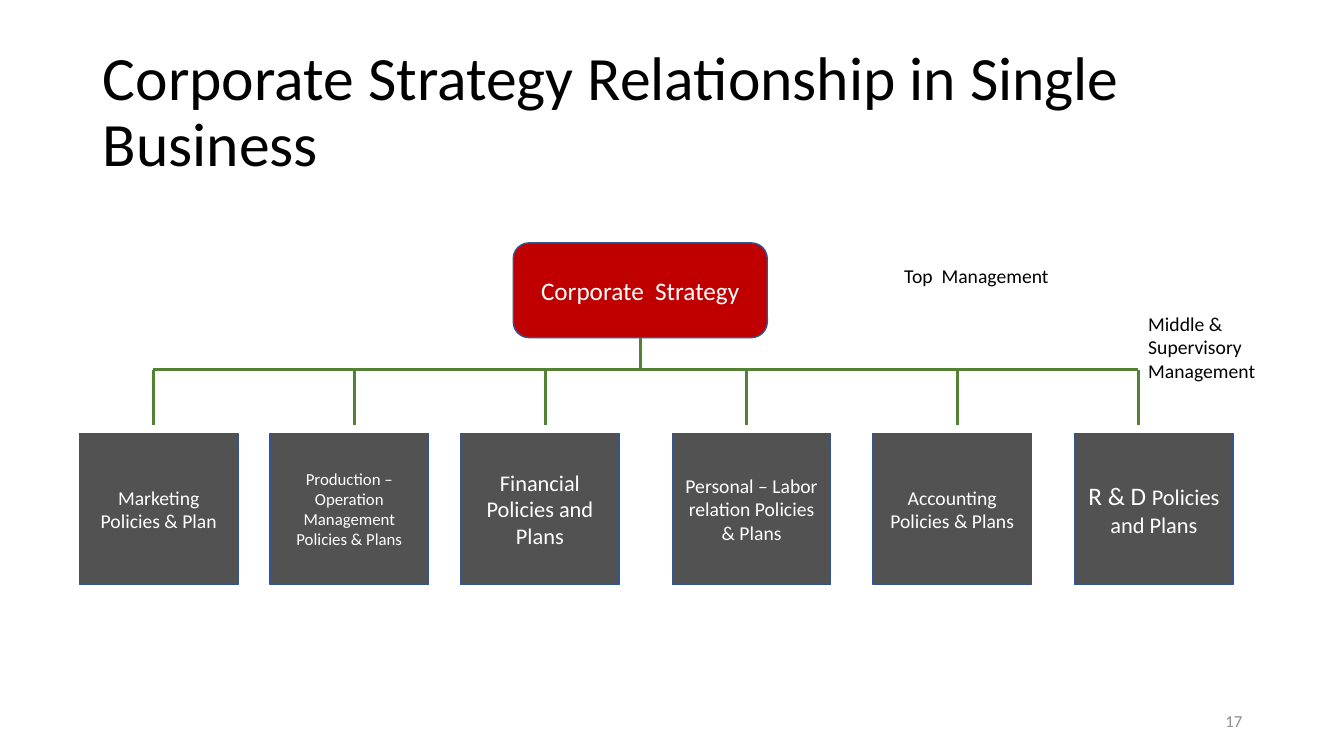
from pptx import Presentation
from pptx.dml.color import RGBColor
from pptx.enum.shapes import MSO_CONNECTOR as Link, MSO_SHAPE as Form
from pptx.enum.text import MSO_ANCHOR as Anchor, MSO_AUTO_SIZE as Fit, PP_ALIGN as Align
from pptx.util import Inches, Pt
from lxml import etree

DRAW = "http://schemas.openxmlformats.org/drawingml/2006/main"


def color(code):
    return RGBColor.from_string(code)


class Chart:
    """Style and current slide of an organization chart."""
    face = "Calibri"
    ink, pale, muted = "000000", "FFFFFF", "8C8C8C"
    red, gray, edge, green = "C00000", "525252", "325491", "548235"

    def __init__(self, slide):
        self.slide = slide

    def style(self, font, size, code):
        font.name, font.size = self.face, Pt(size)
        font.color.rgb = color(code)

    def fill_text(self, shape, runs, code, align=Align.LEFT, anchor=Anchor.MIDDLE):
        frame = shape.text_frame
        frame.word_wrap = True
        frame.vertical_anchor = anchor
        para = frame.paragraphs[0]
        para.alignment = align
        for text, size in runs:
            run = para.add_run()
            run.text = text
            if len(runs) > 1:
                self.style(run.font, size, code)
        if len(runs) == 1:
            self.style(para.font, runs[0][1], code)
        return para

    def title(self, text, *area):
        shape = self.slide.shapes.title
        shape.left, shape.top, shape.width, shape.height = map(Inches, area)
        self.fill_text(shape, [(text, 44)], self.ink).line_spacing = 0.9
        shape.text_frame.auto_size = Fit.NONE

    def label(self, text, size, *area, code=ink, **place):
        shape = self.slide.shapes.add_textbox(*map(Inches, area))
        self.fill_text(shape, [(text, size)], code, **place)

    def box(self, form, fill, runs, *area):
        shape = self.slide.shapes.add_shape(form, *map(Inches, area))
        shape.shadow.inherit = False
        shape.fill.solid()
        shape.fill.fore_color.rgb = color(fill)
        shape.line.color.rgb = color(self.edge)
        shape.line.width = Pt(1)
        self.fill_text(shape, runs, self.pale, Align.CENTER)
        return shape

    def line(self, *ends):
        link = self.slide.shapes.add_connector(Link.STRAIGHT, *map(Inches, ends))
        link.line.color.rgb = color(self.green)
        link.line.width = Pt(2.25)
        etree.SubElement(link._element.spPr, f"{{{DRAW}}}effectLst")
        return link


def main():
    deck = Presentation()
    deck.slide_width, deck.slide_height = Inches(13.33), Inches(7.5)
    chart = Chart(deck.slides.add_slide(deck.slide_layouts[5]))

    # Title and page number
    chart.title("Corporate Strategy Relationship in Single Business",
                0.92, 0.4, 11.5, 1.45)
    chart.label("17", 12, 9.42, 6.95, 3, 0.4, code=chart.muted, align=Align.RIGHT)

    # Top box
    top = chart.box(Form.ROUNDED_RECTANGLE, chart.red,
                    [("Corporate  Strategy", 18)], 5.09, 2.41, 2.52, 0.94)

    # Policy boxes: left edge, drop line, text runs
    units = [
        (0.79, 1.52, [("Marketing Policies & Plan", 14)]),
        (2.68, 3.52, [("Production – Operation Management Policies & Plans", 12)]),
        (4.57, 5.41, [("Financial Policies and Plans", 16)]),
        (6.67, 7.4, [("Personal – Labor relation Policies & Plans", 14)]),
        (8.66, 9.5, [("Accounting Policies & Plans", 14)]),
        (10.66, 11.29, [("R & D ", 18), ("Policies and Plans", 16)]),
    ]
    rail = 3.67
    for left, drop, runs in units:
        chart.box(Form.RECTANGLE, chart.gray, runs, left, 4.3, 1.57, 1.5)
        chart.line(drop, rail, drop, 4.22)

    # Rail and stem
    chart.line(units[0][1], rail, units[-1][1], rail)
    chart.line(6.35, 3.35, 6.35, rail).begin_connect(top, 2)

    # Management levels
    chart.label("Middle & Supervisory Management", 14,
                11.29, 3.04, 1.84, 0.81, anchor=Anchor.TOP)
    chart.label("Top  Management", 14, 8.87, 2.57, 2.83, 0.34, anchor=Anchor.TOP)

    deck.save("out.pptx")


if __name__ == "__main__":
    main()
